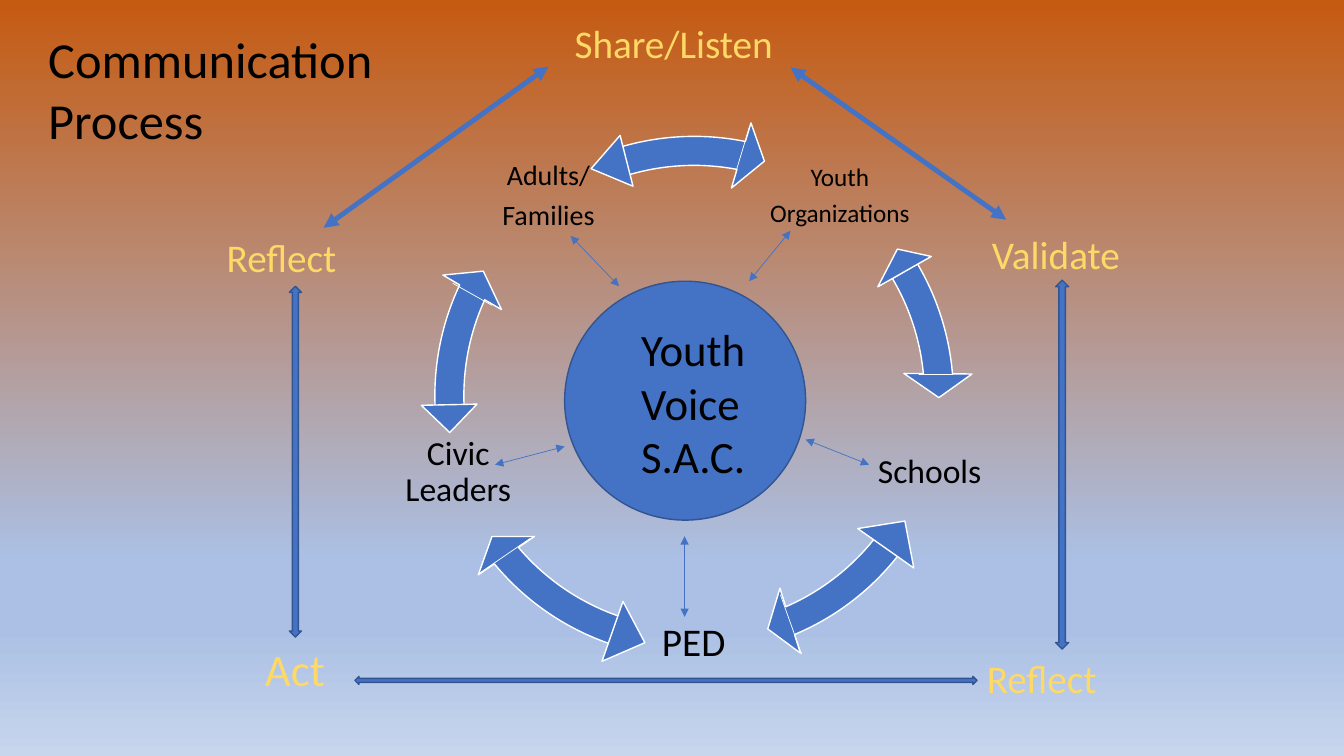
import copy

import pptx
import pptx.dml.color
import pptx.enum.shapes
import pptx.enum.text
import pptx.oxml.ns
import pptx.oxml.xmlchemy
import pptx.util
from pptx.util import Inches

RGBColor = pptx.dml.color.RGBColor
SHAPE = pptx.enum.shapes.MSO_SHAPE
BLACK = RGBColor(0x00, 0x00, 0x00)
WHITE = RGBColor(0xFF, 0xFF, 0xFF)
GOLD = RGBColor(0xFF, 0xD9, 0x66)
BLUE = RGBColor(0x44, 0x72, 0xC4)
DARK_BLUE = RGBColor(0x32, 0x54, 0x91)
SKY = [
    (0.0, RGBColor(0xC5, 0x5A, 0x11)),
    (0.74, RGBColor(0xAB, 0xC0, 0xE4)),
    (0.83, RGBColor(0xAB, 0xC0, 0xE4)),
    (1.0, RGBColor(0xC7, 0xD5, 0xED)),
]

# Box, lines, size
PARTNERS = [
    ((7.59, 1.21, 1.48, 1.48), "Youth\nOrganizations", 18),
    ((8.66, 3.95, 1.12, 1.48), "Schools", 24),
    ((6.14, 5.65, 1.48, 1.48), "PED", 28),
    ((3.77, 4.06, 1.55, 1.25), "Civic Leaders", 24),
    ((4.7, 1.21, 1.48, 1.48), "Adults/\nFamilies", 20),
]
STEPS = [
    ((5.6, 0.14, 2.35, 0.57), "Share/Listen", 28),
    ((9.74, 2.24, 1.84, 0.57), "Validate", 28),
    ((9.69, 6.44, 1.5, 0.57), "Reflect", 28),
    ((2.53, 6.32, 1.37, 0.64), "Act", 32),
    ((2.15, 2.27, 1.62, 0.57), "Reflect", 28),
]
# Top of the ring, head angle and tail angle of each arc
RING_ARCS = [
    (1.16, 212.926, 197.668),
    (1.16, 40.14, 22.541),
    (1.19, 84.052, 64.499),
    (1.16, 122.971, 106.131),
    (1.16, 168.65, 151.989),
]
# Second arrowhead of each arc: preset, box, rotation, adjustments
ARC_HEADS = [
    (SHAPE.RIGHT_TRIANGLE, (4.26, 3.82, 0.39, 0.39), 313.8, ()),
    (SHAPE.ISOSCELES_TRIANGLE, (5.78, 1.46, 0.52, 0.36), 255.7, (0.521,)),
    (SHAPE.ISOSCELES_TRIANGLE, (8.61, 2.48, 0.61, 0.23), 330.4, (0.58,)),
    (SHAPE.ISOSCELES_TRIANGLE, (8.54, 5.14, 0.68, 0.33), 35.1, ()),
    (SHAPE.ISOSCELES_TRIANGLE, (5.92, 6.15, 0.63, 0.34), 109.3, ()),
]
ARC_SEAMS = [
    (4.49, 2.81, 4.88, 3.03),
    (7.43, 1.27, 7.3, 1.7),
    (9.11, 3.71, 9.45, 3.71),
    (7.74, 5.9, 7.95, 6.49),
    (4.75, 5.69, 5.26, 5.34),
]
SPOKES = [
    (5.6, 4.43, 4.91, 4.61),
    (6.14, 2.84, 5.66, 2.34),
    (7.43, 2.79, 7.84, 2.29),
    (7.99, 4.36, 8.62, 4.61),
    (6.79, 5.32, 6.79, 6.12),
]
ROOF_ARROWS = [(7.84, 0.67, 9.98, 2.18), (5.44, 0.66, 3.21, 2.26)]
SIDE_ARROWS = [
    (SHAPE.UP_DOWN_ARROW, (2.87, 2.84, 0.12, 3.48)),
    (SHAPE.LEFT_RIGHT_ARROW, (3.52, 6.71, 6.17, 0.08)),
    (SHAPE.UP_DOWN_ARROW, (10.47, 2.78, 0.13, 3.66)),
]


def paint_background(slide):
    fill = slide.background.fill
    fill.gradient()
    fill.gradient_angle = 270
    stop_list = slide.element.xpath(".//a:gsLst")[0]
    while len(stop_list) < len(SKY):
        stop_list.append(copy.deepcopy(stop_list[0]))
    for stop, (position, color) in zip(fill.gradient_stops, SKY):
        stop.position = position
        stop.color.rgb = color


def add_label(slide, box, text, size, color=BLACK):
    label = slide.shapes.add_textbox(*map(Inches, box))
    frame = label.text_frame
    frame.text = text
    frame.word_wrap = True
    frame.auto_size = pptx.enum.text.MSO_AUTO_SIZE.SHAPE_TO_FIT_TEXT
    for paragraph in frame.paragraphs:
        for run in paragraph.runs:
            run.font.name = "Calibri"
            run.font.size = pptx.util.Pt(size)
            run.font.color.rgb = color
    return frame


def add_partner(slide, box, text, size):
    frame = add_label(slide, box, text, size)
    frame.auto_size = pptx.enum.text.MSO_AUTO_SIZE.NONE
    frame.vertical_anchor = pptx.enum.text.MSO_ANCHOR.MIDDLE
    frame.margin_left = frame.margin_right = Inches(0.03)
    frame.margin_top = frame.margin_bottom = Inches(0.03)
    for paragraph in frame.paragraphs:
        paragraph.alignment = pptx.enum.text.PP_ALIGN.CENTER
        paragraph.line_spacing = 0.9
        # Space after as a share of the line height
        paragraph.space_after = pptx.util.Pt(0)
        space_after = paragraph._p.pPr.find(pptx.oxml.ns.qn("a:spcAft"))
        space_after.clear()
        percent = pptx.oxml.xmlchemy.OxmlElement("a:spcPct")
        percent.set("val", "35000")
        space_after.append(percent)


def add_blue_shape(slide, preset, box, outline, rotation=0, adjustments=()):
    shape = slide.shapes.add_shape(preset, *map(Inches, box))
    shape.shadow.inherit = False
    shape.fill.solid()
    shape.fill.fore_color.rgb = BLUE
    shape.line.color.rgb = outline
    shape.line.width = pptx.util.Pt(1)
    shape.rotation = rotation
    for index, value in enumerate(adjustments):
        shape.adjustments[index] = value


def add_line(slide, ends, color, width, arrows=False):
    line = slide.shapes.add_connector(
        pptx.enum.shapes.MSO_CONNECTOR.STRAIGHT, *map(Inches, ends))
    line.line.color.rgb = color
    line.line.width = pptx.util.Pt(width)
    if arrows:
        for tag in ("a:headEnd", "a:tailEnd"):
            tip = pptx.oxml.xmlchemy.OxmlElement(tag)
            tip.set("type", "triangle")
            line.line._get_or_add_ln().append(tip)
    line._element.spPr.append(pptx.oxml.xmlchemy.OxmlElement("a:effectLst"))


def main():
    deck = pptx.Presentation()
    deck.slide_width = Inches(13.33)
    deck.slide_height = Inches(7.5)
    slide = deck.slides.add_slide(deck.slide_layouts[6])
    paint_background(slide)

    # Ring of partners
    for partner, (top, head, tail) in zip(PARTNERS, RING_ARCS):
        add_partner(slide, *partner)
        add_blue_shape(slide, SHAPE.CIRCULAR_ARROW, (4.12, top, 5.53, 5.53),
                       WHITE, adjustments=(0.052, 3.361, head, tail, 0.061))

    # Centre
    add_blue_shape(slide, SHAPE.OVAL, (5.6, 2.79, 2.39, 2.37), DARK_BLUE)
    add_label(slide, (6.26, 3.14, 2.14, 1.72), "Youth\nVoice\nS.A.C.", 32)

    # Outer steps and the arrows between them
    for step in STEPS:
        add_label(slide, *step, color=GOLD)
    for preset, box in SIDE_ARROWS:
        add_blue_shape(slide, preset, box, DARK_BLUE)
    for ends in ROOF_ARROWS:
        add_line(slide, ends, BLUE, 3.5, arrows=True)
    for ends in SPOKES:
        add_line(slide, ends, BLUE, 0.5, arrows=True)

    # Title
    add_label(slide, (0.38, 0.23, 3.88, 1.31), "Communication\nProcess", 36)

    # Second heads and seams of the ring arrows
    for preset, box, rotation, adjustments in ARC_HEADS:
        add_blue_shape(slide, preset, box, WHITE, rotation, adjustments)
    for ends in ARC_SEAMS:
        add_line(slide, ends, WHITE, 0.5)

    deck.save("out.pptx")


if __name__ == "__main__":
    main()
